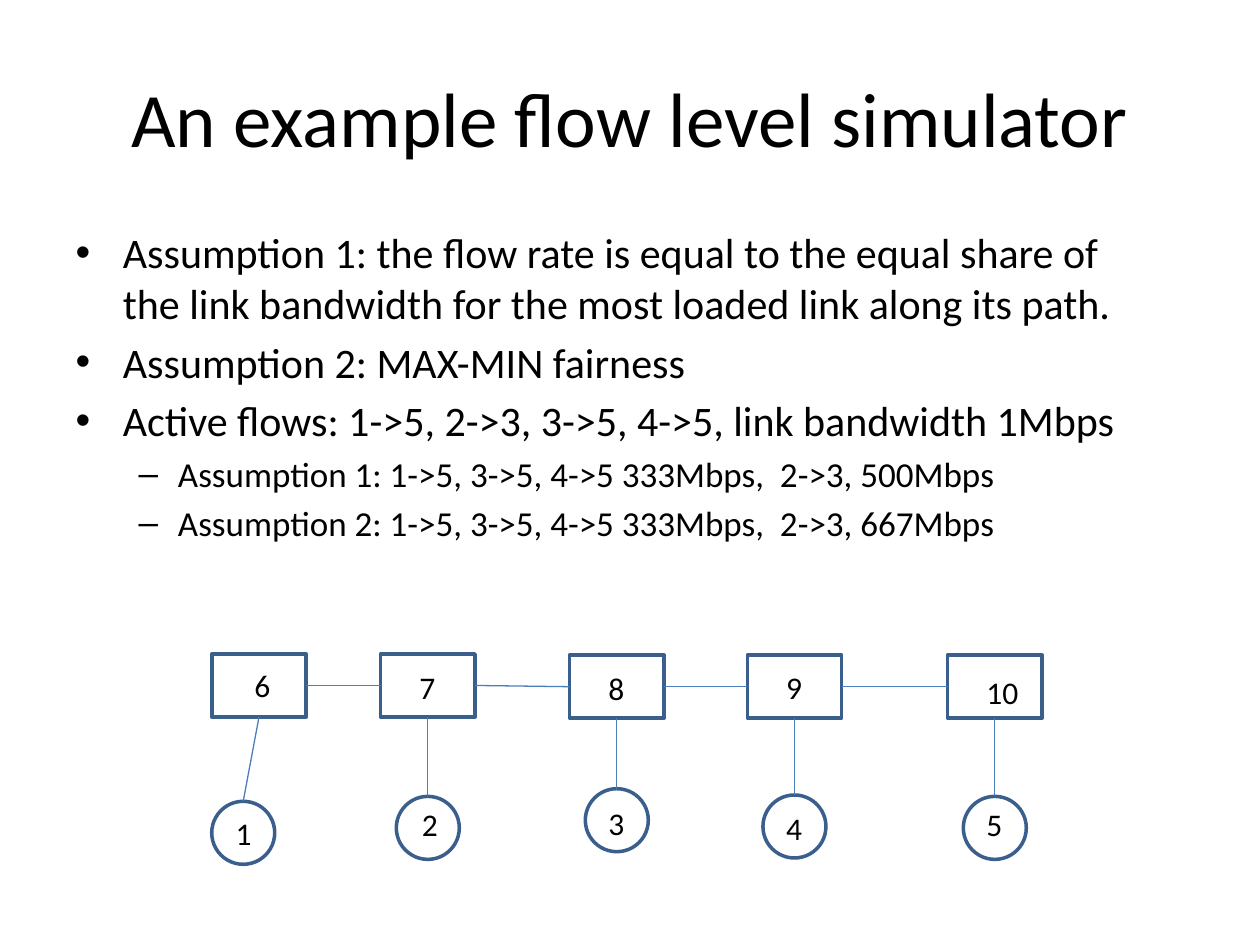
from lxml import etree
from pptx import Presentation
from pptx.dml.color import RGBColor
from pptx.enum import shapes as kinds, text as txt
from pptx.oxml import ns
from pptx.util import Pt

FONT = "Calibri"
BLACK, OUTLINE, LINK = "000000", "3A5F8C", "4B7EBC"
TOP, LEFT, BOTTOM, RIGHT = range(4)

ASSUMPTIONS = [
    (0, "Assumption 1: the flow rate is equal to the equal share of the link bandwidth "
        "for the most loaded link along its path."),
    (0, "Assumption 2: MAX-MIN fairness"),
    (0, "Active flows: 1->5, 2->3, 3->5, 4->5, link bandwidth 1Mbps"),
    (1, "Assumption 1: 1->5, 3->5, 4->5 333Mbps,  2->3, 500Mbps"),
    (1, "Assumption 2: 1->5, 3->5, 4->5 333Mbps,  2->3, 667Mbps"),
]
LEVEL_SIZES = [24, 20]

SWITCH_SIZE, HOST_SIZE = (54, 36), (36, 36)
SWITCHES = [
    ("6", (0, 0), (17.3, 3.6)),
    ("7", (96.5, 0), (111.6, 4.3)),
    ("8", (204.5, 0.7), (219.6, 5)),
    ("9", (306, 0.7), (321.1, 4.3)),
    ("10", (420.5, 0.7), (435.6, 7.2)),
]
HOSTS = [
    ("1", (0, 84.2), (6.5, 87.8)),
    ("2", (105.5, 81.4), (113, 82.8)),
    ("3", (213.5, 77), (219.6, 82)),
    ("4", (315, 80.6), (321.1, 85)),
    ("5", (429.5, 81.4), (435.6, 82.8)),
]


def color(value):
    return RGBColor.from_string(value)


def style(paragraph, size):
    for run in paragraph.runs:
        run.font.name = FONT
        run.font.size = Pt(size)
        run.font.color.rgb = color(BLACK)


def place(part, box):
    part.left, part.top, part.width, part.height = map(Pt, box)


def add_heading(slide, box):
    heading = slide.shapes.title
    place(heading, box)
    heading.text_frame.text = "An example flow level simulator"
    style(heading.text_frame.paragraphs[0], 44)


def add_assumptions(slide, box):
    body = slide.placeholders[1]
    place(body, box)
    frame = body.text_frame
    for index, (level, wording) in enumerate(ASSUMPTIONS):
        item = frame.add_paragraph() if index else frame.paragraphs[0]
        item.text = wording
        item.level = level
        style(item, LEVEL_SIZES[level])


def add_node(slide, preset, left, top, size):
    node = slide.shapes.add_shape(preset, Pt(left), Pt(top), *map(Pt, size))
    node.shadow.inherit = False
    node.fill.background()
    node.line.color.rgb = color(OUTLINE)
    node.line.width = Pt(2)
    return node


def add_label(slide, number, left, top):
    width = 14.4 + 9.2 * len(number)
    label = slide.shapes.add_textbox(Pt(left), Pt(top), Pt(width), Pt(29))
    label.text_frame.word_wrap = False
    label.text_frame.auto_size = txt.MSO_AUTO_SIZE.SHAPE_TO_FIT_TEXT
    label.text_frame.text = number
    style(label.text_frame.paragraphs[0], 18)


def add_link(slide, start, start_side, end, end_side):
    link = slide.shapes.add_connector(kinds.MSO_CONNECTOR.STRAIGHT, 0, 0, 0, 0)
    link.begin_connect(start, start_side)
    link.end_connect(end, end_side)
    link.line.color.rgb = color(LINK)
    link.line.width = Pt(0.75)
    etree.SubElement(link._element.spPr, ns.qn("a:effectLst"))


def add_network(slide, left, top):
    def add_row(row, preset, size):
        return [add_node(slide, preset, left + x, top + y, size) for _, (x, y), _ in row]

    switches = add_row(SWITCHES, kinds.MSO_SHAPE.RECTANGLE, SWITCH_SIZE)
    hosts = add_row(HOSTS, kinds.MSO_SHAPE.OVAL, HOST_SIZE)
    for number, _, (x, y) in SWITCHES + HOSTS:
        add_label(slide, number, left + x, top + y)
    for host, switch in zip(hosts, switches):
        add_link(slide, host, TOP, switch, BOTTOM)
    for switch, neighbor in zip(switches, switches[1:]):
        add_link(slide, switch, RIGHT, neighbor, LEFT)


def main():
    deck = Presentation()
    deck.slide_width, deck.slide_height = Pt(720), Pt(540)
    slide = deck.slides.add_slide(deck.slide_layouts[1])
    add_heading(slide, (36, 21.6, 648, 90))
    add_assumptions(slide, (36, 126, 636, 204))
    add_network(slide, 121, 373.7)
    deck.save("out.pptx")


if __name__ == "__main__":
    main()
